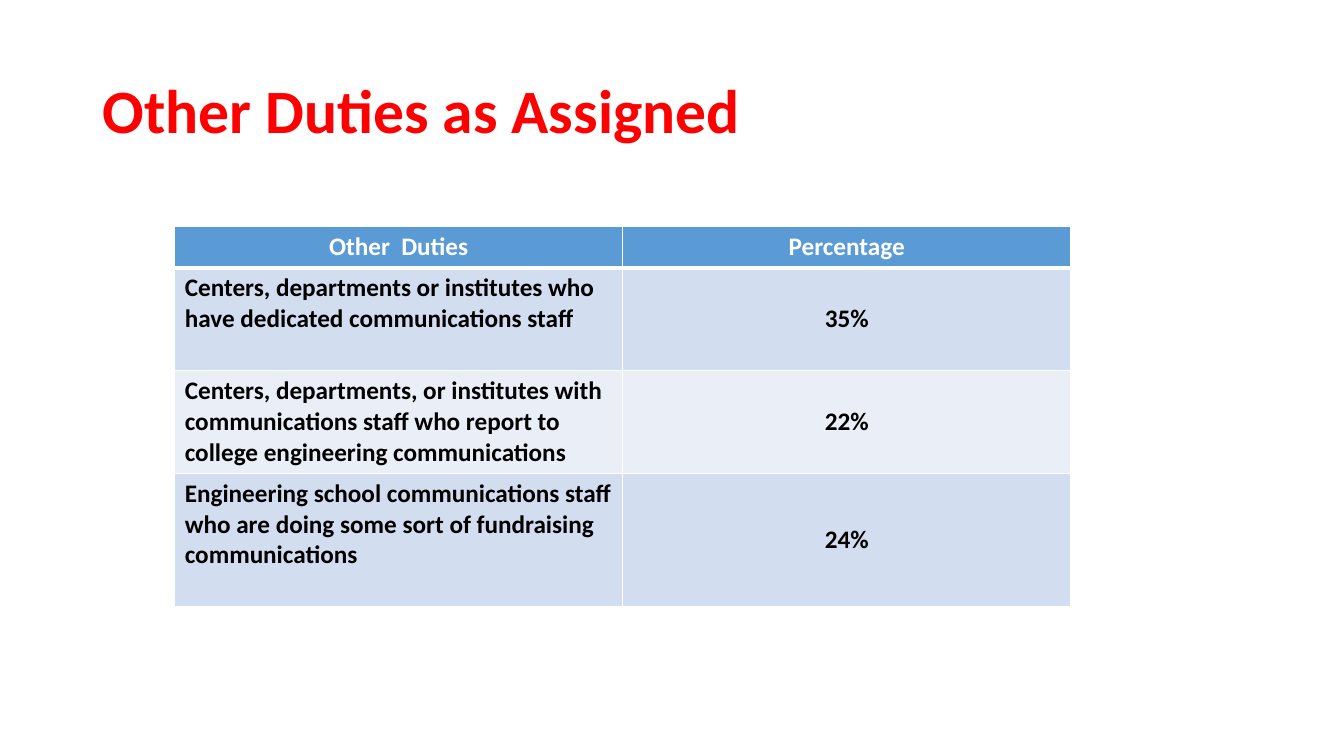
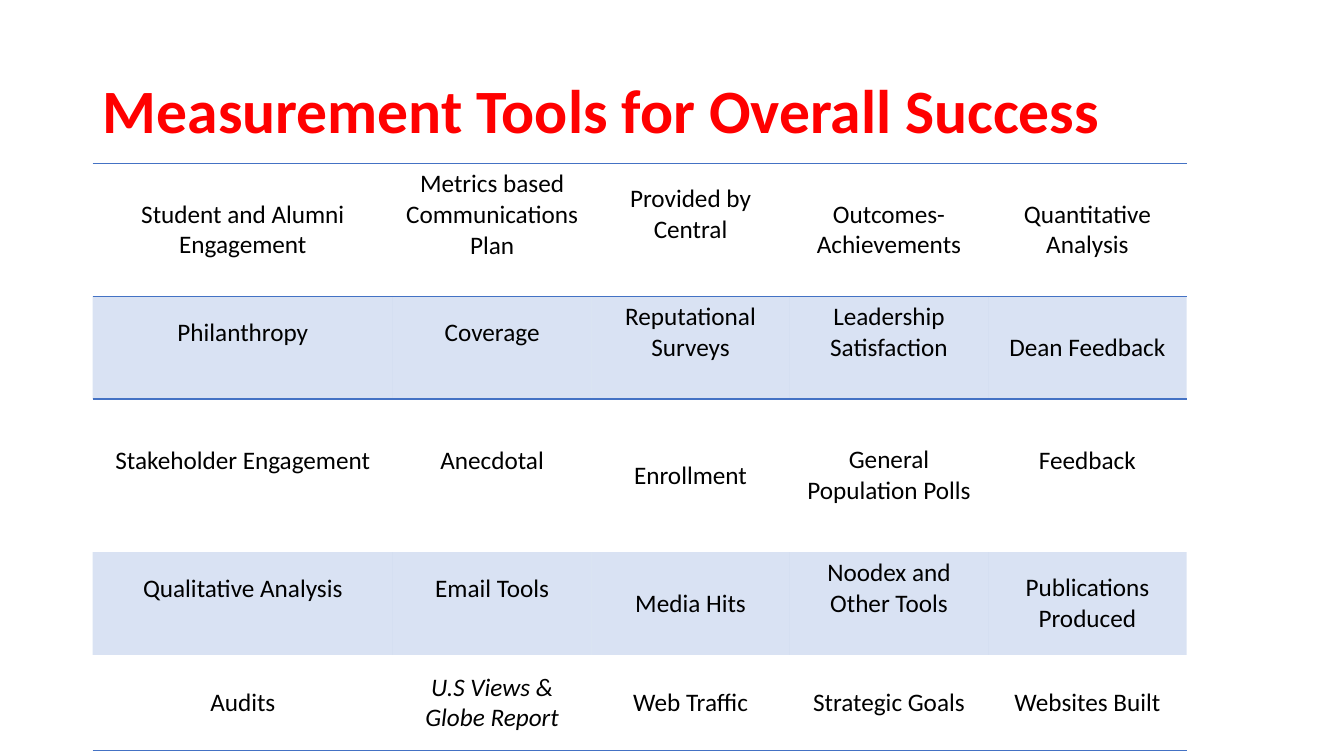
from lxml import etree
from pptx import Presentation
from pptx.dml.color import RGBColor
from pptx.enum.text import MSO_ANCHOR, PP_ALIGN
from pptx.oxml.ns import qn
from pptx.util import Emu, Inches, Pt

LEFT, CENTER = PP_ALIGN.LEFT, PP_ALIGN.CENTER
TOP, MIDDLE = MSO_ANCHOR.TOP, MSO_ANCHOR.MIDDLE

SLIDE_WIDTH, SLIDE_HEIGHT = Inches(13.33), Inches(7.5)
TITLE_ONLY = 5
FONT = "Calibri"
TITLE_SIZE, TEXT_SIZE = 44, 18
TEXT_LINE = Inches(0.3)
RED, WHITE, BLACK = "FF0000", "FFFFFF", "000000"
HEADER_BLUE, BAND_DARK, BAND_LIGHT = "5B9BD5", "D2DEEF", "EAEFF7"
RULE_BLUE = "4472C4"
BAND_OPACITY = 20
NO_TABLE_STYLE = "{2D5ABB26-0587-4C30-8999-92F81FD0307C}"

TITLE_BOX = (6.9, 5.33, 86.25, 19.33)
DUTIES_BOX = (13, 30, 66.67, 50.13)
TOOLS_BOX = (6.9, 21.6, 81.4, 77.7)

DUTIES = [
    ("Other  Duties", "Percentage"),
    ("Centers, departments or institutes who have dedicated communications staff", "35%"),
    ("Centers, departments, or institutes with communications staff who report to "
     "college engineering communications", "22%"),
    ("Engineering school communications staff who are doing some sort of fundraising "
     "communications", "24%"),
]
DUTY_COLUMNS = (1, 1)
DUTY_ROWS = (0.4, 1.02, 1.02, 1.32)

TOOLS = [
    ("Student and Alumni Engagement", "Metrics based Communications Plan",
     "Provided by Central", "Outcomes-Achievements", "Quantitative Analysis"),
    ("Philanthropy", "Coverage", "Reputational Surveys", "Leadership Satisfaction",
     "Dean Feedback"),
    ("Stakeholder Engagement", "Anecdotal", "Enrollment", "General Population Polls",
     "Feedback"),
    ("Qualitative Analysis", "Email Tools", "Media Hits", "Noodex and Other Tools",
     "Publications Produced"),
    ("Audits", "U.S Views & Globe Report", "Web Traffic", "Strategic Goals",
     "Websites Built"),
]
TOOL_COLUMNS = (2.98, 1.97, 1.97, 1.97, 1.97)
TOOL_ROWS = (1.32, 1.02, 1.52, 1.02, 0.95)
RAISED_COLUMNS = ((1, 2), (0, 1, 2, 3), (0, 1, 4), (0, 1, 3), ())
ITALIC_TOOL = (4, 1)


def rgb(color):
    """Turn a hex string into a colour."""
    return RGBColor.from_string(color)


def place(box):
    """Turn percentages of the slide into left, top, width and height."""
    sides = (SLIDE_WIDTH, SLIDE_HEIGHT) * 2
    return [Emu(round(side * share / 100)) for side, share in zip(sides, box)]


def format_text(frame, size, color, bold=False, italic=False, align=LEFT):
    """Format every paragraph and run of a text frame."""
    for paragraph in frame.paragraphs:
        paragraph.alignment = align
        for run in paragraph.runs:
            font = run.font
            font.name, font.size = FONT, Pt(size)
            font.bold, font.italic = bold, italic
            font.color.rgb = rgb(color)


def add_titled_slide(deck, heading):
    """Add a slide with the shared title style."""
    slide = deck.slides.add_slide(deck.slide_layouts[TITLE_ONLY])
    title = slide.shapes.title
    title.left, title.top, title.width, title.height = place(TITLE_BOX)
    frame = title.text_frame
    frame.text = heading
    frame.vertical_anchor = MIDDLE
    frame.paragraphs[0].line_spacing = 0.9
    format_text(frame, TITLE_SIZE, RED, bold=True)
    return slide


def add_grid(slide, box, texts, column_shares, row_shares):
    """Add an unstyled table whose columns and rows share the given box."""
    left, top, width, height = place(box)
    frame = slide.shapes.add_table(len(texts), len(texts[0]), left, top, width, height)
    table = frame.table
    table.first_row = table.horz_banding = False
    table._tbl.tblPr.find(qn("a:tableStyleId")).text = NO_TABLE_STYLE
    for column, share in zip(table.columns, column_shares):
        column.width = Emu(round(width * share / sum(column_shares)))
    for row, share in zip(table.rows, row_shares):
        row.height = Emu(round(height * share / sum(row_shares)))
    for row, row_texts in zip(table.rows, texts):
        for cell, text in zip(row.cells, row_texts):
            cell.text_frame.text = text
    return table


def set_borders(cell, color, **widths):
    """Draw the named cell borders (L, R, T, B) at widths in points."""
    properties = cell._tc.get_or_add_tcPr()
    for side in "LRTB":
        if side in widths:
            line = etree.SubElement(properties, qn(f"a:ln{side}"), w=str(Pt(widths[side])))
            fill = etree.SubElement(line, qn("a:solidFill"))
            etree.SubElement(fill, qn("a:srgbClr"), val=color)


def set_fill(cell, color, opacity=100):
    """Fill a cell, see-through when the opacity is under 100 percent."""
    cell.fill.solid()
    cell.fill.fore_color.rgb = rgb(color)
    if opacity < 100:
        tint = cell._tc.tcPr.find(qn("a:solidFill")).find(qn("a:srgbClr"))
        etree.SubElement(tint, qn("a:alpha"), val=str(opacity * 1000))


def add_duties_table(slide, box):
    """Add the banded table of duties and percentages."""
    table = add_grid(slide, box, DUTIES, DUTY_COLUMNS, DUTY_ROWS)
    for r, row in enumerate(table.rows):
        header = r == 0
        band = HEADER_BLUE if header else (BAND_LIGHT, BAND_DARK)[r % 2]
        for c, cell in enumerate(row.cells):
            is_duty = c == 0 and not header
            set_borders(cell, WHITE, L=1, R=1, T=3 if r == 1 else 1, B=3 if header else 1)
            set_fill(cell, band)
            cell.vertical_anchor = TOP if header or is_duty else MIDDLE
            format_text(cell.text_frame, TEXT_SIZE, WHITE if header else BLACK,
                        bold=True, align=LEFT if is_duty else CENTER)


def add_tools_table(slide, box):
    """Add the ruled table of measurement tools."""
    table = add_grid(slide, box, TOOLS, TOOL_COLUMNS, TOOL_ROWS)
    rules = {0: {"T": 1, "B": 1}, 1: {"T": 1}, len(TOOLS) - 1: {"B": 1}}
    for r, row in enumerate(table.rows):
        for c, cell in enumerate(row.cells):
            set_borders(cell, RULE_BLUE, **rules.get(r, {}))
            if r % 2:
                set_fill(cell, RULE_BLUE, BAND_OPACITY)
            else:
                cell.fill.background()
            cell.vertical_anchor = MIDDLE
            if c in RAISED_COLUMNS[r]:
                cell.margin_bottom = cell.margin_bottom + TEXT_LINE
            format_text(cell.text_frame, TEXT_SIZE, BLACK,
                        italic=(r, c) == ITALIC_TOOL, align=CENTER)


def main():
    """Build and save the deck."""
    deck = Presentation()
    deck.slide_width, deck.slide_height = SLIDE_WIDTH, SLIDE_HEIGHT
    add_duties_table(add_titled_slide(deck, "Other Duties as Assigned"), DUTIES_BOX)
    add_tools_table(add_titled_slide(deck, "Measurement Tools for Overall Success"), TOOLS_BOX)
    deck.save("out.pptx")


if __name__ == "__main__":
    main()
